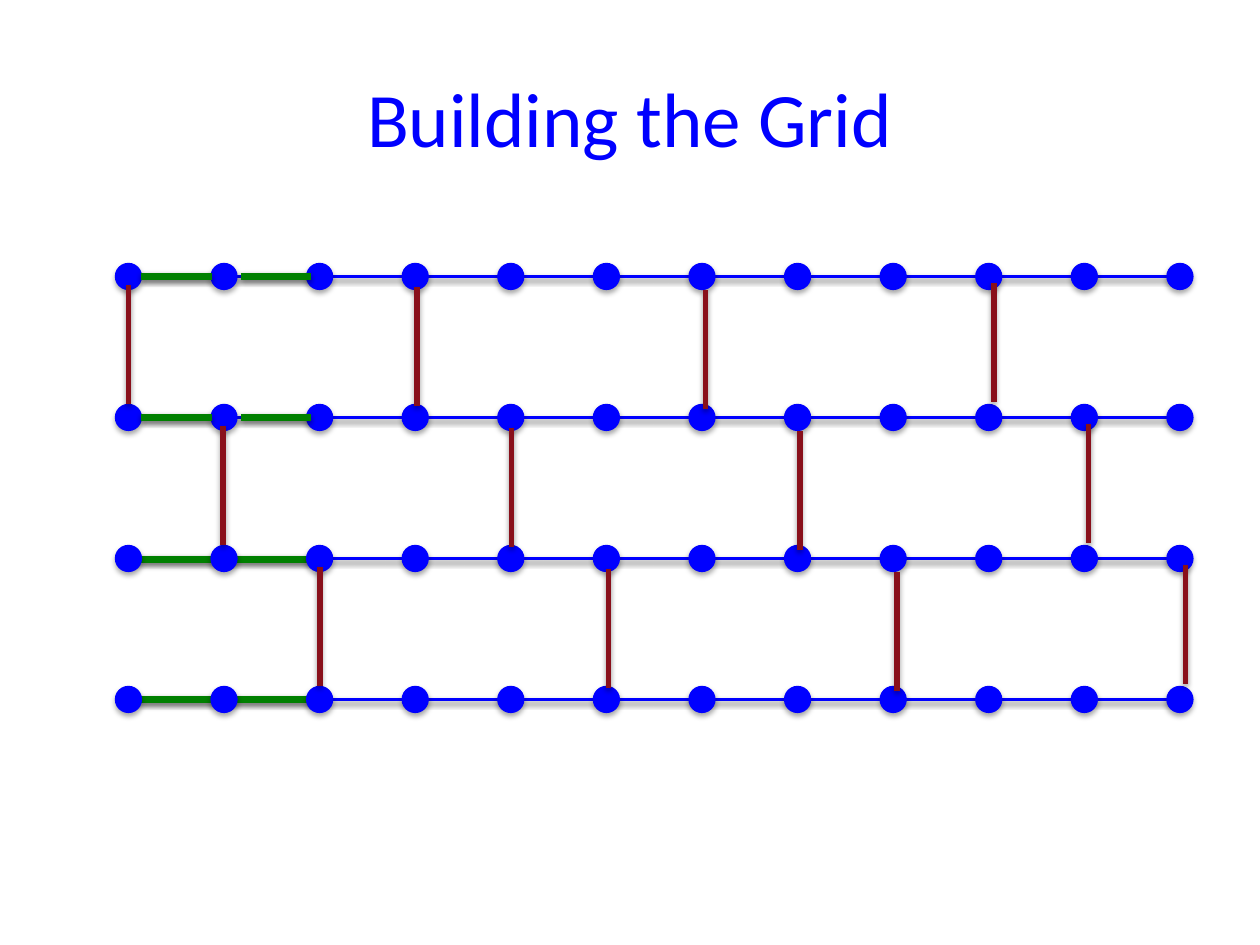
from lxml.etree import SubElement
from pptx import Presentation
from pptx.dml.color import RGBColor
from pptx.enum.shapes import MSO_CONNECTOR, MSO_SHAPE
from pptx.enum.text import MSO_ANCHOR, PP_ALIGN
from pptx.oxml.ns import qn
from pptx.util import Emu, Pt

# Content, with lengths in px (126 to the inch)
TITLE = "Building the Grid"
TITLE_BOX = (63, 38, 1134, 157)
BLUE, GREEN, RED = "0000FF", "008000", "89101B"

COLUMNS, FIRST_X, LAST_X = 12, 128.5, 1180
ROW_TOP, ROW_STEP = 276.5, 141
DOT = 26

# Green bars per row as (x1, x2); drawn over the dots in the upper rows
BARS_ABOVE = {0: [(141, 212), (241, 311)], 1: [(141, 212), (241, 311)]}
BARS_BELOW = {2: [(129, 311)], 3: [(132, 314)]}
BAR_SHIFT = {2: 1}

# Each staircase has one rung below each of the first three rows
RUNG_XS = [128.5, 223, 320]
RUNG_LENGTH = 119
STAIR_STEP = 288.5
STAIR_TOPS = [285, 287, 290, 283]


def px(value):
    return Emu(round(value * 914400 / 126))


def rgb(color):
    return RGBColor.from_string(color)


def add_shadow(shape, alpha, distance):
    effects = SubElement(shape._element.spPr, qn("a:effectLst"))
    shadow = SubElement(effects, qn("a:outerShdw"), blurRad=str(Pt(3.1)),
                        dist=str(Pt(distance)), dir="5400000", rotWithShape="0")
    black = SubElement(shadow, qn("a:srgbClr"), val="000000")
    SubElement(black, qn("a:alpha"), val=str(alpha * 1000))


def add_line(shapes, x1, y1, x2, y2, color, width):
    line = shapes.add_connector(MSO_CONNECTOR.STRAIGHT, px(x1), px(y1), px(x2), px(y2))
    line.line.color.rgb = rgb(color)
    line.line.width = Pt(width)
    add_shadow(line, 38, 1.6)


def add_dot(shapes, x, y):
    dot = shapes.add_shape(MSO_SHAPE.OVAL, px(x - DOT / 2), px(y - DOT / 2), px(DOT), px(DOT))
    dot.fill.solid()
    dot.fill.fore_color.rgb = rgb(BLUE)
    dot.line.color.rgb = rgb(BLUE)
    dot.line.width = Pt(0.75)
    add_shadow(dot, 35, 1.8)


def write_text(frame, text, size, color, font="Calibri", align=PP_ALIGN.CENTER):
    frame.word_wrap = True
    frame.vertical_anchor = MSO_ANCHOR.MIDDLE
    paragraph = frame.paragraphs[0]
    paragraph.alignment = align
    run = paragraph.add_run()
    run.text = text
    run.font.size = Pt(size)
    run.font.name = font
    run.font.color.rgb = rgb(color)


def add_bars(shapes, bars):
    for row, spans in bars.items():
        y = ROW_TOP + row * ROW_STEP + BAR_SHIFT.get(row, 0)
        for x1, x2 in spans:
            add_line(shapes, x1, y, x2, y, GREEN, 4.5)


def main():
    presentation = Presentation()
    presentation.slide_width, presentation.slide_height = px(1260), px(945)
    slide = presentation.slides.add_slide(presentation.slide_layouts[5])

    # Title
    title = slide.shapes.title
    title.left, title.top, title.width, title.height = map(px, TITLE_BOX)
    write_text(title.text_frame, TITLE, 44, BLUE)

    # Row lines, with the lower green bars between them and the dots
    row_ys = [ROW_TOP + row * ROW_STEP for row in range(4)]
    for y in row_ys:
        add_line(slide.shapes, FIRST_X + DOT / 2, y, LAST_X, y, BLUE, 2)
    add_bars(slide.shapes, BARS_BELOW)

    # Dots, one group for each row
    column_step = (LAST_X - FIRST_X) / (COLUMNS - 1)
    for y in row_ys:
        group = slide.shapes.add_group_shape()
        for column in range(COLUMNS):
            add_dot(group.shapes, FIRST_X + column * column_step, y)

    # Red staircases between the rows
    for index, stair_top in enumerate(STAIR_TOPS):
        group = slide.shapes.add_group_shape()
        for row, rung_x in enumerate(RUNG_XS):
            x = rung_x + index * STAIR_STEP
            y = stair_top + row * ROW_STEP
            add_line(group.shapes, x, y, x, y + RUNG_LENGTH, RED, 3)

    # Upper green bars
    add_bars(slide.shapes, BARS_ABOVE)

    presentation.save("out.pptx")


if __name__ == "__main__":
    main()
